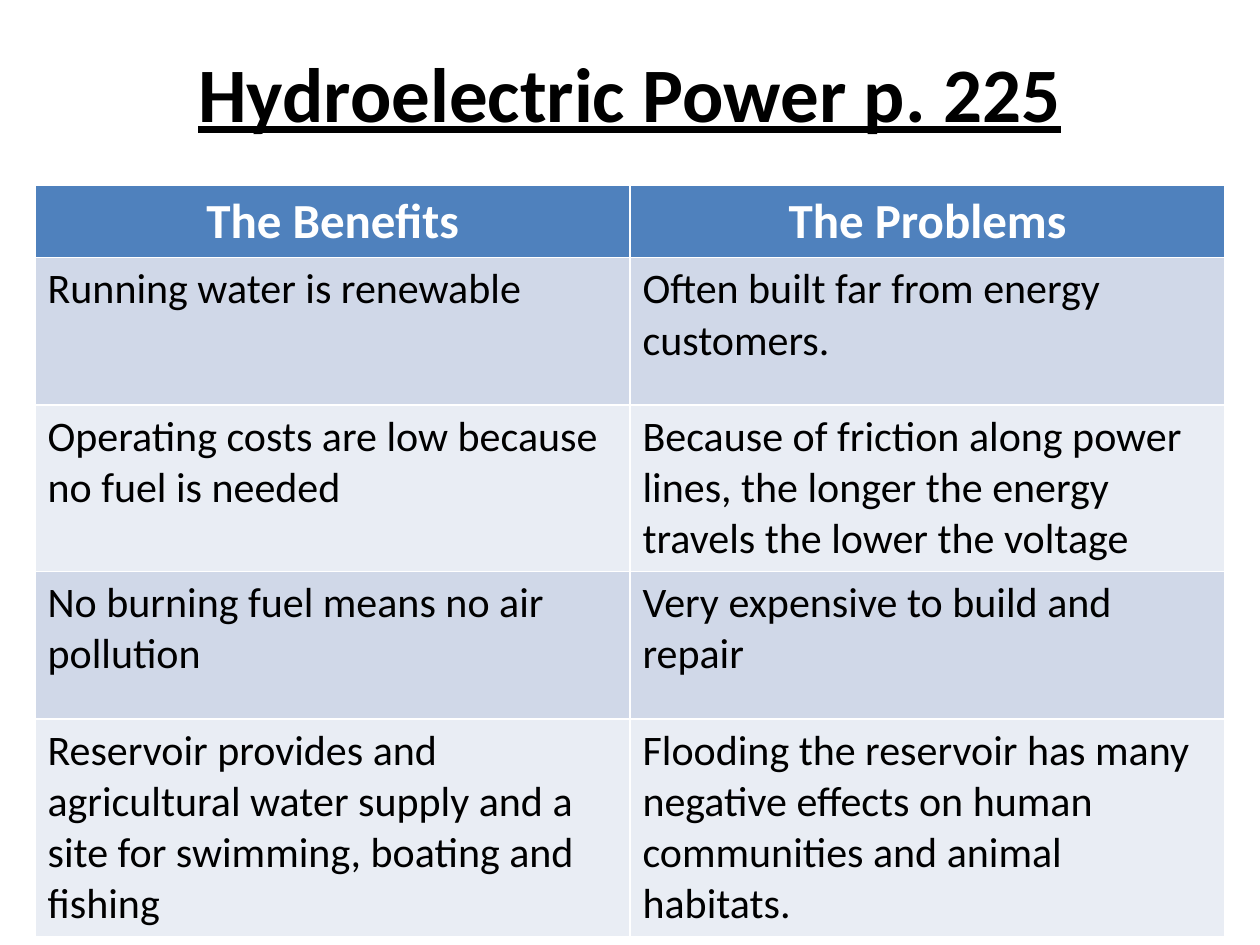
from typing import NamedTuple

from pptx import Presentation
from pptx.dml.color import RGBColor
from pptx.enum.text import MSO_ANCHOR, PP_ALIGN
from pptx.util import Pt

BLACK = RGBColor(0x00, 0x00, 0x00)
WHITE = RGBColor(0xFF, 0xFF, 0xFF)
BLUE = RGBColor(0x4F, 0x81, 0xBD)
BANDS = (RGBColor(0xD0, 0xD8, 0xE8), RGBColor(0xE9, 0xED, 0xF4))

FONT = "Calibri"
HEAD_TALL = 40
ROW_TALL = 84.3


class Pair(NamedTuple):
    gain: str
    cost: str


HEAD = Pair("The Benefits", "The Problems")
PAIRS = [
    Pair("Running water is renewable",
         "Often built far from energy customers."),
    Pair("Operating costs are low because no fuel is needed",
         "Because of friction along power lines, the longer the energy "
         "travels the lower the voltage"),
    Pair("No burning fuel means no air pollution",
         "Very expensive to build and repair"),
    Pair("Reservoir provides and agricultural water supply and a site for "
         "swimming, boating and fishing",
         "Flooding the reservoir has many negative effects on human "
         "communities and animal habitats."),
]


def write(frame, text: str, *, size: float, color: RGBColor = BLACK,
          bold: bool = False, line: bool = False,
          align: PP_ALIGN = PP_ALIGN.LEFT) -> None:
    para = frame.paragraphs[0]
    para.alignment = align
    run = para.add_run()
    run.text = text
    font = run.font
    font.name = FONT
    font.size = Pt(size)
    font.bold = bold
    font.underline = line
    font.color.rgb = color


def fill_row(table, index: int, pair: Pair, fill: RGBColor, tall: float,
             **style) -> None:
    table.rows[index].height = Pt(tall)
    for cell, text in zip(table.rows[index].cells, pair):
        cell.fill.solid()
        cell.fill.fore_color.rgb = fill
        write(cell.text_frame, text, **style)


def add_title(slide, text: str) -> None:
    title = slide.shapes.title
    title.left, title.top = Pt(36), Pt(21.6)
    title.width, title.height = Pt(648), Pt(61.2)
    title.text_frame.vertical_anchor = MSO_ANCHOR.MIDDLE
    write(title.text_frame, text, size=44, bold=True, line=True,
          align=PP_ALIGN.CENTER)


def add_grid(slide) -> None:
    count = len(PAIRS)
    table = slide.shapes.add_table(
        count + 1, len(HEAD), Pt(20), Pt(105.8), Pt(680),
        Pt(HEAD_TALL + count * ROW_TALL)).table
    fill_row(table, 0, HEAD, BLUE, HEAD_TALL, size=28, color=WHITE,
             bold=True, align=PP_ALIGN.CENTER)
    for index, pair in enumerate(PAIRS):
        fill_row(table, index + 1, pair, BANDS[index % 2], ROW_TALL, size=24)


def main() -> None:
    deck = Presentation()
    deck.slide_width, deck.slide_height = Pt(720), Pt(540)
    slide = deck.slides.add_slide(deck.slide_layouts.get_by_name("Title Only"))
    add_title(slide, "Hydroelectric Power p. 225")
    add_grid(slide)
    deck.save("out.pptx")


if __name__ == "__main__":
    main()
